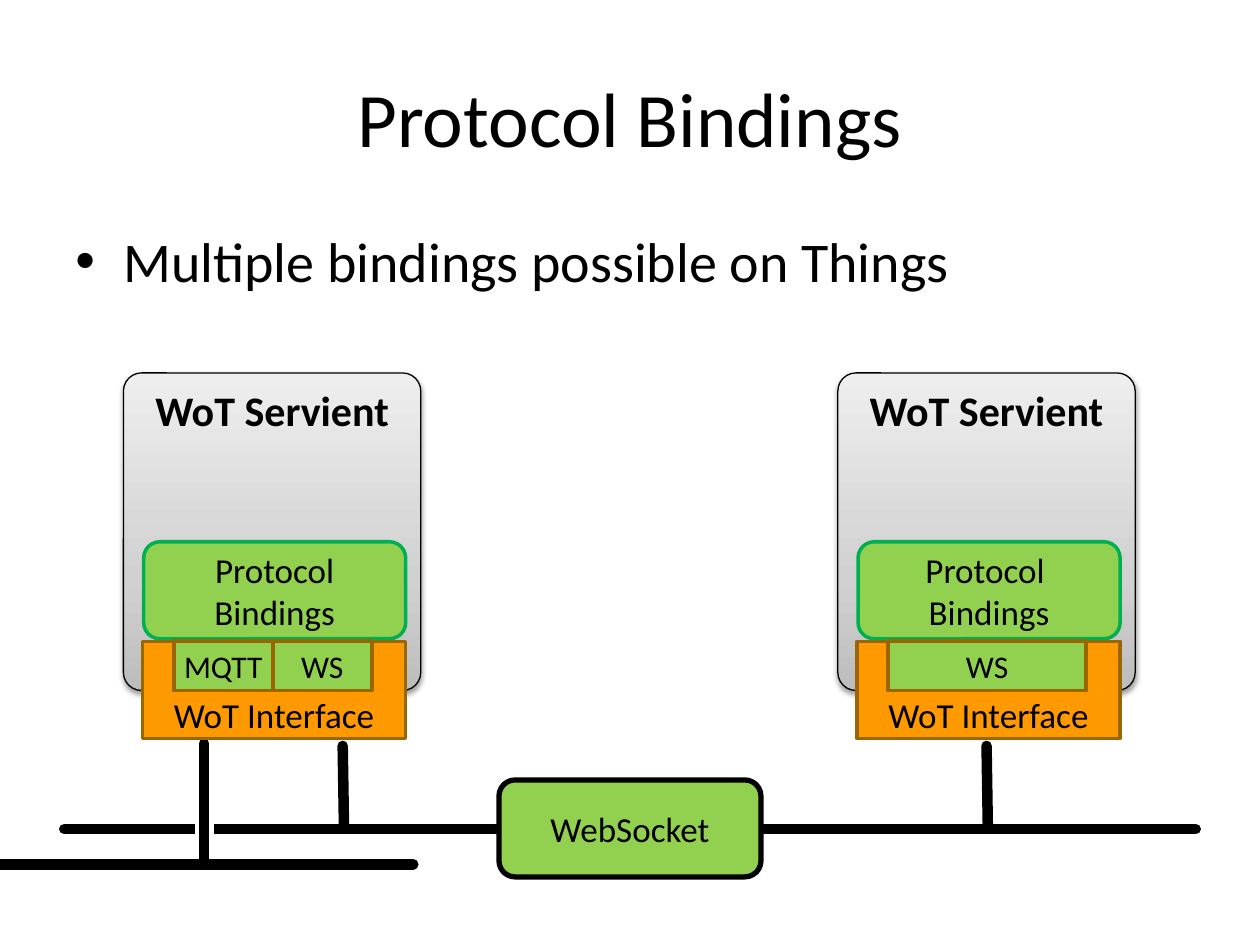
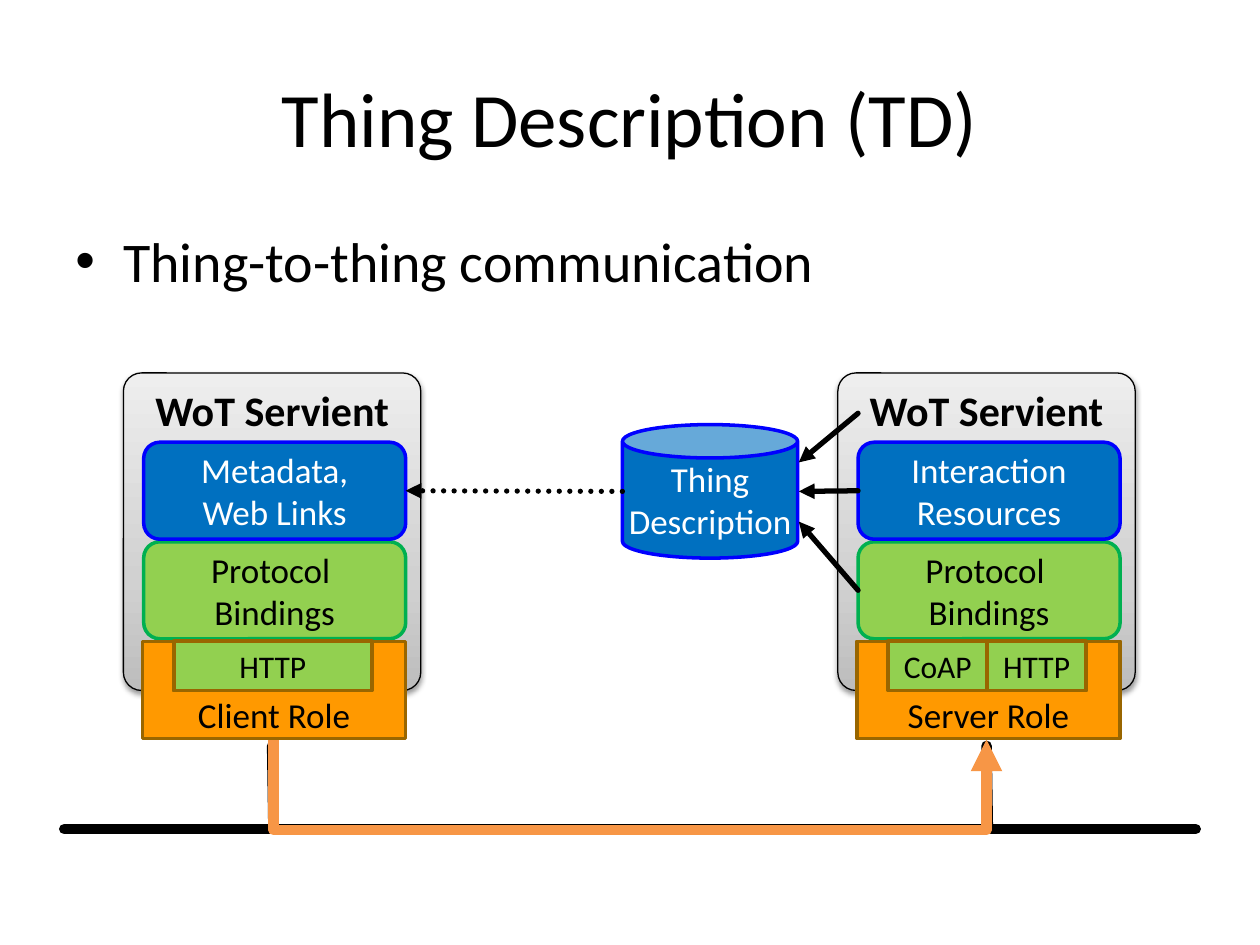
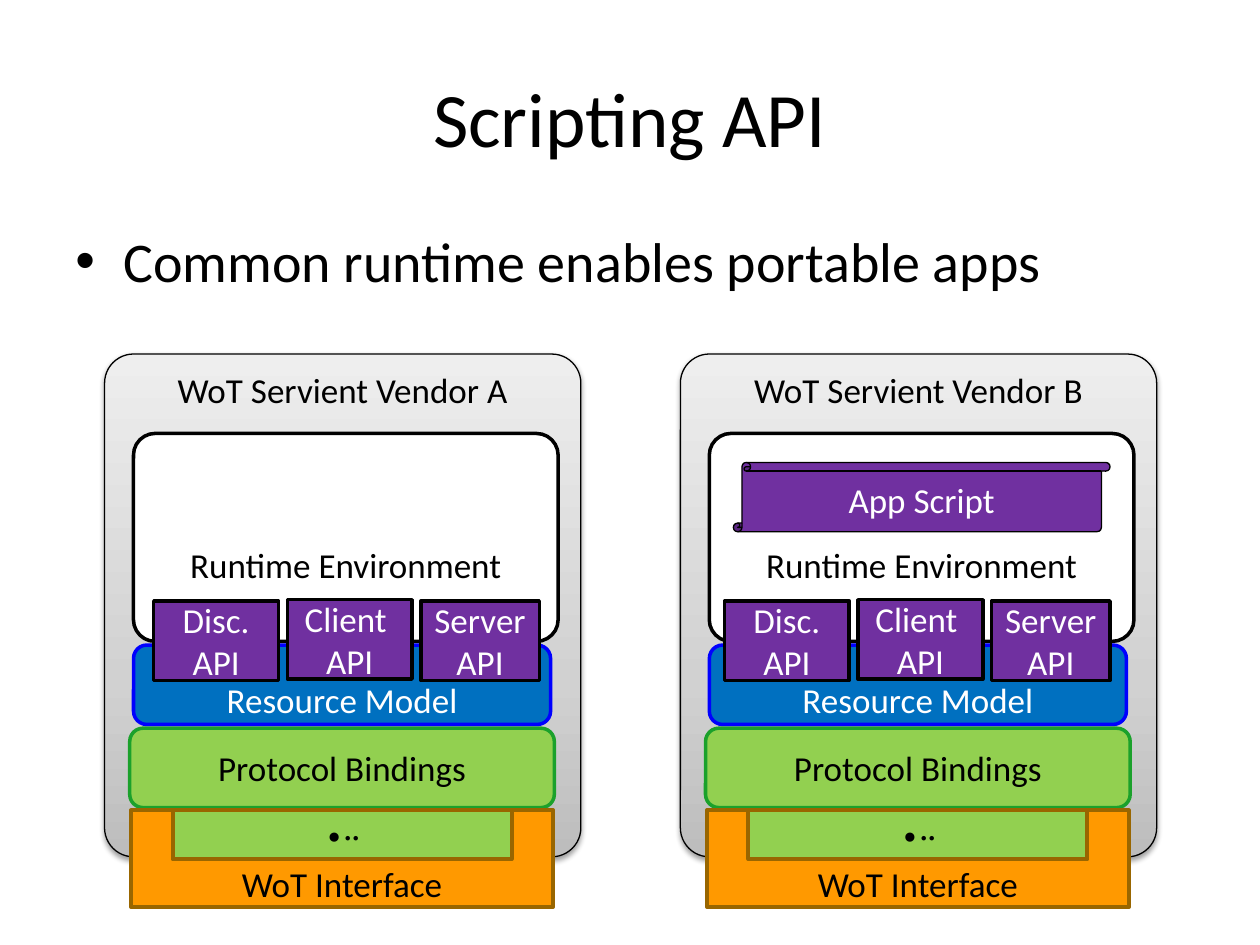
import pptx
import pptx.dml.color
import pptx.enum.dml
import pptx.enum.shapes
import pptx.enum.text
import pptx.oxml
import pptx.oxml.ns
import pptx.util

Inches = pptx.util.Inches
Pt = pptx.util.Pt
SHAPE = pptx.enum.shapes.MSO_SHAPE
CONNECTOR = pptx.enum.shapes.MSO_CONNECTOR
ANCHOR = pptx.enum.text.MSO_ANCHOR
ALIGN = pptx.enum.text.PP_ALIGN
DASH = pptx.enum.dml.MSO_LINE
qn = pptx.oxml.ns.qn

# Shared look
FONT = "Calibri"
BLACK, WHITE = "000000", "FFFFFF"
GREEN, GREEN_EDGE, DARK_GREEN_EDGE = "92D050", "00B050", "1BA12B"
BLUE, BLUE_EDGE = "0070C0", "0000FF"
ORANGE, BROWN = "FF9900", "996600"
PURPLE, REQUEST = "7030A0", "F79646"
SERVIENT_STOPS = ((0, "BDBDBD"), (35, "D1D1D1"), (100, "EEEEEE"))

# Servient geometry on the two binding slides
CLIENT_LEFT, SERVER_LEFT = 0.98, 6.65
PANEL_INSET, PANEL_WIDTH, PANEL_HEIGHT = 0.16, 2.08, 0.77
STRIP_HEIGHT = 0.39
NETWORK_Y = 6.58


def rgb(hex_color):
    return pptx.dml.color.RGBColor.from_string(hex_color)


def xml(source):
    root, rest = source.split(" ", 1) if " " in source.split(">")[0] else (None, None)
    if root:
        source = f"{root} {pptx.oxml.ns.nsdecls('a')} {rest}"
    else:
        head, tail = source.split(">", 1)
        slash = "/" if head.endswith("/") else ""
        source = f"{head.rstrip('/')} {pptx.oxml.ns.nsdecls('a')}{slash}>{tail}"
    return pptx.oxml.parse_xml(source)


def write(shape, text, size=20, color=BLACK, bold=False, align=ALIGN.CENTER,
          anchor=ANCHOR.MIDDLE, wrap=True, insets=(0.1, 0.05, 0.1, 0.05)):
    """Fill a shape with text; a tuple gives one paragraph per item."""
    frame = shape.text_frame
    frame.word_wrap = wrap
    frame.vertical_anchor = anchor
    (frame.margin_left, frame.margin_top,
     frame.margin_right, frame.margin_bottom) = map(Inches, insets)
    lines = (text,) if isinstance(text, str) else text
    for index, line in enumerate(lines):
        paragraph = frame.add_paragraph() if index else frame.paragraphs[0]
        paragraph.text = line
        paragraph.alignment = align
        for run in paragraph.runs:
            run.font.name = FONT
            run.font.size = Pt(size)
            run.font.bold = bold
            run.font.color.rgb = rgb(color)
    return shape


def paint(shape, fill, edge, weight):
    shape.shadow.inherit = False
    shape.fill.solid()
    shape.fill.fore_color.rgb = rgb(fill)
    shape.line.color.rgb = rgb(edge)
    shape.line.width = Pt(weight)


def block(slide, kind, box, text, fill, edge, weight=2, corner=None, **text_format):
    shape = slide.shapes.add_shape(kind, *map(Inches, box))
    if corner is not None:
        shape.adjustments[0] = corner
    paint(shape, fill, edge, weight)
    return write(shape, text, **text_format)


def panel(slide, box, text, fill, edge, **options):
    return block(slide, SHAPE.ROUNDED_RECTANGLE, box, text, fill, edge, **options)


def header(prs, title, bullet):
    """Add a slide with its title and bullet line."""
    slide = prs.slides.add_slide(prs.slide_layouts[6])
    write(slide.shapes.add_textbox(*map(Inches, (0.5, 0.3, 9, 1.25))), title, size=44)
    body = slide.shapes.add_textbox(*map(Inches, (0.5, 1.75, 9, 4.95)))
    write(body, bullet, size=32, align=ALIGN.LEFT, anchor=ANCHOR.TOP)
    properties = body.text_frame.paragraphs[0]._p.get_or_add_pPr()
    properties.set("marL", str(Inches(0.38)))
    properties.set("indent", str(-Inches(0.38)))
    for part in ('<a:spcBef><a:spcPct val="20000"/></a:spcBef>',
                 '<a:buFont typeface="Arial"/>', '<a:buChar char="•"/>'):
        properties.append(xml(part))
    return slide


def servient(slide, box, name, **text_format):
    """Grey gradient card with a soft shadow."""
    card = panel(slide, box, name, WHITE, BLACK, weight=0.75, corner=0.061,
                 anchor=ANCHOR.TOP, wrap=False, **text_format)
    stops = "".join(f'<a:gs pos="{position * 1000}"><a:srgbClr val="{color}"/></a:gs>'
                    for position, color in SERVIENT_STOPS)
    properties = card._element.spPr
    properties.replace(properties.find(qn("a:solidFill")), xml(
        f'<a:gradFill rotWithShape="1"><a:gsLst>{stops}</a:gsLst>'
        '<a:lin ang="16200000" scaled="0"/></a:gradFill>'))
    properties.find(qn("a:effectLst")).append(xml(
        f'<a:outerShdw blurRad="{Pt(3.1)}" dist="{Pt(1.6)}" dir="5400000" rotWithShape="0">'
        '<a:srgbClr val="000000"><a:alpha val="38000"/></a:srgbClr></a:outerShdw>'))
    return card


def interface(slide, left, top, width, notch_start, notch_end, label):
    """Orange block with a notch in its top for the protocol strip."""
    right, bottom, floor = left + width, top + PANEL_HEIGHT, top + STRIP_HEIGHT
    outline = [(left, top), (left + notch_start, top), (left + notch_start, floor),
               (left + notch_end, floor), (left + notch_end, top),
               (right, top), (right, bottom), (left, bottom)]
    points = [(Inches(x), Inches(y)) for x, y in outline]
    builder = slide.shapes.build_freeform(*points[0])
    builder.add_line_segments(points[1:], close=True)
    shape = builder.convert_to_shape()
    paint(shape, ORANGE, BROWN, 2)
    write(shape, label, anchor=ANCHOR.BOTTOM, insets=(0.1, 0, 0.1, 0.02))


def protocol_strip(slide, left, top, width, protocols):
    step = width / len(protocols)
    for index, protocol in enumerate(protocols):
        block(slide, SHAPE.RECTANGLE, (left + index * step, top, step, STRIP_HEIGHT),
              protocol, GREEN, BROWN, weight=2.25, size=18, insets=(0, 0.05, 0, 0.05))


def style_line(connector, color, weight, arrow=False, dash=None, cap="rnd"):
    connector.line.color.rgb = rgb(color)
    connector.line.width = Pt(weight)
    if dash:
        connector.line.dash_style = dash
    outline = connector.line._get_or_add_ln()
    outline.set("cap", cap)
    if arrow:
        outline.append(xml('<a:tailEnd type="triangle"/>'))
    connector._element.spPr.append(xml("<a:effectLst/>"))


def line(slide, start, end, color=BLACK, weight=6, **style):
    connector = slide.shapes.add_connector(CONNECTOR.STRAIGHT, *map(Inches, start + end))
    style_line(connector, color, weight, **style)
    return connector


def request_path(slide, start_x, end_x, y, depth):
    """U-shaped arrow that drops to the network and rises again."""
    span, rise = end_x - start_x, 0.01
    path = slide.shapes.add_connector(
        CONNECTOR.ELBOW, *map(Inches, (start_x, y, end_x, y + rise)))
    path.left = Inches((start_x + end_x - rise) / 2)
    path.top = Inches(y + (rise - span) / 2)
    path.width, path.height = Inches(rise), Inches(span)
    properties = path._element.spPr
    frame = properties.find(qn("a:xfrm"))
    frame.set("rot", "16200000")
    frame.set("flipH", "1")
    guides = properties.find(qn("a:prstGeom")).find(qn("a:avLst"))
    guides.append(xml(f'<a:gd name="adj1" fmla="val {round(depth / rise * 100000)}"/>'))
    style_line(path, REQUEST, 6, arrow=True, cap="flat")


def network(slide, stubs):
    line(slide, (0.51, NETWORK_Y), (9.49, NETWORK_Y))
    for x in stubs:
        line(slide, (x, 6.56), (x - 0.01, 5.92))


def thing(slide, left, bindings, role, protocols, model=None):
    """Servient with bindings, interface and, if given, a resource model."""
    servient(slide, (left, 2.96, 2.36, 2.52), "WoT Servient", size=24, bold=True)
    inner = left + PANEL_INSET
    size = (PANEL_WIDTH, PANEL_HEIGHT)
    bindings_panel = panel(slide, (inner, 4.3) + size, bindings, GREEN, GREEN_EDGE)
    model_panel = model and panel(slide, (inner, 3.51) + size, model, BLUE, BLUE_EDGE,
                                  color=WHITE)
    interface(slide, left + 0.15, 5.09, 2.09, 0.25, 1.82, role)
    protocol_strip(slide, left + 0.4, 5.09, 1.57, protocols)
    return bindings_panel, model_panel


def vendor(slide, shift, name, api_left, script=None):
    """Wide servient with runtime, script APIs and protocol stack."""
    servient(slide, (0.83 + shift, 2.81, 3.78, 3.99), name)
    panel(slide, (1.06 + shift, 3.44, 3.37, 1.65), "Runtime Environment", WHITE, BLACK,
          corner=0.104, anchor=ANCHOR.BOTTOM, insets=(0.1, 0.05, 0.1, 0.39))
    panel(slide, (1.03 + shift, 5.78, 3.37, 0.63), "Protocol Bindings",
          GREEN, DARK_GREEN_EDGE)
    panel(slide, (1.06 + shift, 5.12, 3.31, 0.63), "Resource Model", BLUE, BLUE_EDGE,
          color=WHITE, anchor=ANCHOR.BOTTOM, insets=(0.1, 0.05, 0.1, 0))
    if script:
        block(slide, SHAPE.VERTICAL_SCROLL, (1.25 + shift, 3.67, 2.99, 0.55), script,
              PURPLE, BLACK, weight=0.75, color=WHITE, wrap=False)
    apis = (("Disc.\nAPI", 4.77, 0.99), ("Client \nAPI", 4.76, 0.99),
            ("Server\nAPI", 4.77, 0.94))
    for index, (api, top, width) in enumerate(apis):
        panel(slide, (api_left + index * 1.06, top, width, 0.63), api, PURPLE, BLACK,
              corner=0, color=WHITE)
    interface(slide, 1.04 + shift, 6.43, 3.35, 0.4, 2.93, "WoT Interface")
    protocol_strip(slide, 1.37 + shift, 6.43, 2.69, ["∙··"])


def protocol_bindings(prs):
    slide = header(prs, "Protocol Bindings", "Multiple bindings possible on Things")
    network(slide, (2.73, 7.84))
    # Second network, crossing over the first
    line(slide, (-0.2, 6.86), (3.28, 6.86))
    for x in (1.57, 1.68):
        line(slide, (x, 6.35), (x, 6.74), color=WHITE, weight=3, cap="flat")
    line(slide, (1.62, 6.85), (1.62, 5.9))
    thing(slide, CLIENT_LEFT, "Protocol\nBindings", "WoT Interface", ["MQTT", "WS"])
    thing(slide, SERVER_LEFT, "Protocol \nBindings", "WoT Interface", ["WS"])
    panel(slide, (3.96, 6.19, PANEL_WIDTH, PANEL_HEIGHT), "WebSocket", GREEN, BLACK, weight=3)


def thing_description(prs):
    slide = header(prs, "Thing Description (TD)", "Thing-to-thing communication")
    network(slide, (2.17, 7.84))
    request_path(slide, 2.17, 7.83, 5.86, 0.74)
    _, metadata = thing(slide, CLIENT_LEFT, "Protocol \nBindings", "Client Role",
                        ["HTTP"], "Metadata,\nWeb Links")
    bindings, resources = thing(slide, SERVER_LEFT, "Protocol \nBindings", "Server Role",
                                ["CoAP", "HTTP"], "Interaction\nResources")
    block(slide, SHAPE.CAN, (4.94, 3.37, 1.39, 1.06), ("Thing", "Description"),
          BLUE, BLUE_EDGE, color=WHITE, wrap=False)
    # What the description is made from, and who reads it
    for source, start_y, end_y in ((resources, 3.9, 3.9), (bindings, 4.69, 4.14),
                                   (None, 3.28, 3.67)):
        feed = line(slide, (6.81, start_y), (6.34, end_y), weight=3, arrow=True)
        if source is not None:
            feed.begin_connect(source, 1)
    reading = line(slide, (4.94, 3.9), (3.23, 3.9), weight=3, arrow=True,
                   dash=DASH.ROUND_DOT)
    reading.end_connect(metadata, 3)


def scripting_api(prs):
    slide = header(prs, "Scripting API", "Common runtime enables portable apps")
    vendor(slide, 0, "WoT Servient Vendor A", 1.22)
    vendor(slide, 4.57, "WoT Servient Vendor B", 5.75, script="App Script")


def main():
    prs = pptx.Presentation()
    prs.slide_width, prs.slide_height = Inches(10), Inches(7.5)
    protocol_bindings(prs)
    thing_description(prs)
    scripting_api(prs)
    prs.save("out.pptx")


if __name__ == "__main__":
    main()
